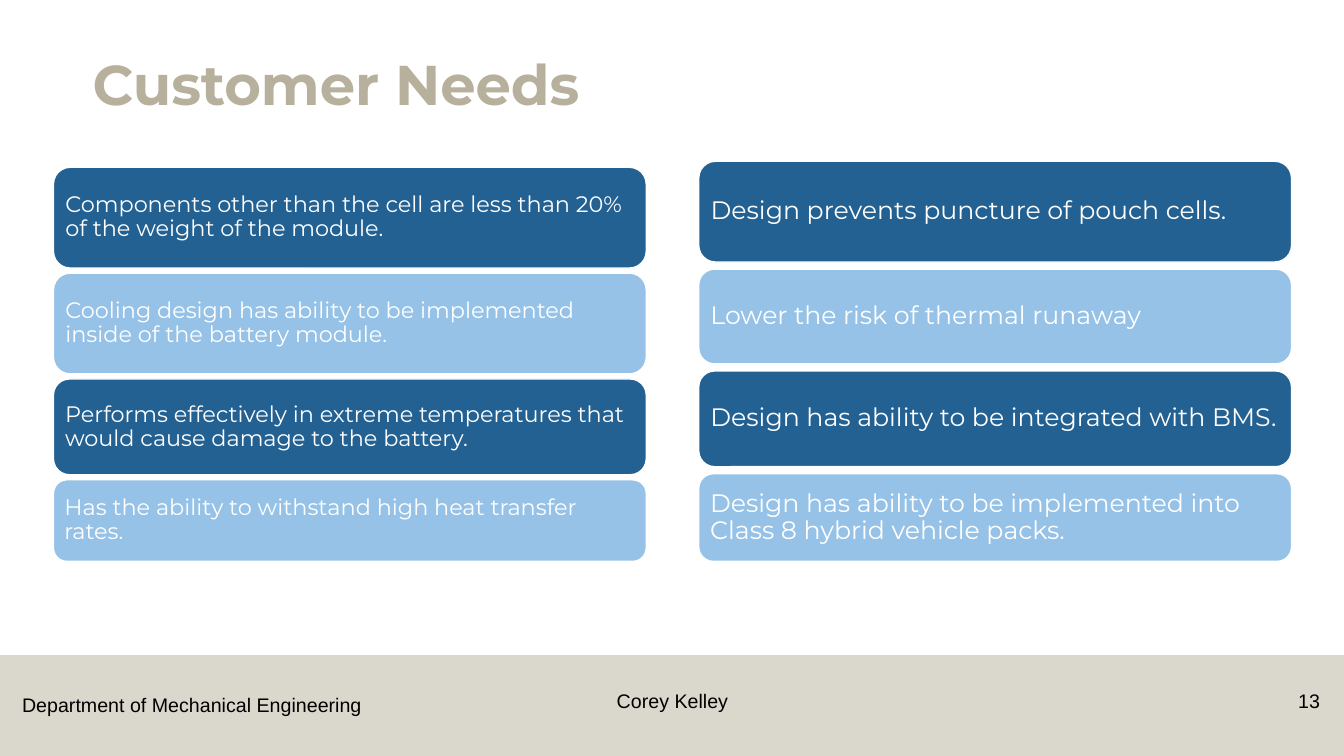
from dataclasses import dataclass

from lxml import etree
from pptx import Presentation
from pptx.dml.color import RGBColor
from pptx.enum.shapes import MSO_SHAPE
from pptx.enum.text import MSO_ANCHOR, PP_ALIGN
from pptx.oxml.ns import qn
from pptx.util import Pt

RECTANGLE, ROUNDED = MSO_SHAPE.RECTANGLE, MSO_SHAPE.ROUNDED_RECTANGLE
TOP, MIDDLE, BOTTOM = MSO_ANCHOR.TOP, MSO_ANCHOR.MIDDLE, MSO_ANCHOR.BOTTOM
LEFT, CENTER, RIGHT = PP_ALIGN.LEFT, PP_ALIGN.CENTER, PP_ALIGN.RIGHT
PX = 9144
SLIDE_WIDTH, SLIDE_HEIGHT = 1333, 750


@dataclass(frozen=True)
class Theme:
    """Colours, fonts and type sizes of the slide."""
    sand: str = "B7B09C"
    navy: str = "236192"
    sky: str = "95C2E6"
    white: str = "FFFFFF"
    black: str = "000000"
    heading_font: str = "Montserrat"
    footer_font: str = "Arial"
    title_size: int = 40
    left_size: int = 16
    right_size: int = 18
    footer_size: int = 14


class SlideBuilder:
    """Draws the elements of one slide in one theme."""

    def __init__(self, slide, theme):
        self.shapes = slide.shapes
        self.theme = theme

    def apply(self, target, formats):
        for name, value in formats.items():
            setattr(target, name, value)

    def fill_text(self, shape, text, frame_format, paragraph_format, font_format, color):
        frame = shape.text_frame
        paragraph = frame.paragraphs[0]
        paragraph.text = text
        self.apply(frame, frame_format)
        self.apply(paragraph, paragraph_format)
        self.apply(paragraph.font, font_format)
        paragraph.font.color.rgb = RGBColor.from_string(color)

    def block(self, kind, box, color):
        shape = self.shapes.add_shape(kind, *(n * PX for n in box))
        shape.shadow.inherit = False
        shape.fill.solid()
        shape.fill.fore_color.rgb = RGBColor.from_string(color)
        return shape

    def footer_band(self, box):
        band = self.block(RECTANGLE, box, self.theme.sand)
        band.line.fill.background()
        color = band.element.spPr.find(qn("a:solidFill"))[0]
        etree.SubElement(color, qn("a:alpha"), val="50000")

    def label(self, box, text, align, wrap=True):
        shape = self.shapes.add_textbox(*(n * PX for n in box))
        self.fill_text(shape, text, {"word_wrap": wrap, "vertical_anchor": TOP},
                       {"alignment": align},
                       {"name": self.theme.footer_font, "size": Pt(self.theme.footer_size)},
                       self.theme.black)

    def title(self, box, text):
        shape = self.shapes.add_textbox(*(n * PX for n in box))
        self.fill_text(shape, text, {"word_wrap": True, "vertical_anchor": BOTTOM},
                       {"alignment": LEFT, "line_spacing": 0.9},
                       {"name": self.theme.heading_font, "size": Pt(self.theme.title_size),
                        "bold": True},
                       self.theme.sand)

    def need(self, box, text, size, color):
        card = self.block(ROUNDED, box, color)
        card.line.color.rgb = RGBColor.from_string(self.theme.white)
        card.line.width = Pt(1)
        margins = {f"margin_{side}": 7 * PX for side in ("left", "top", "right", "bottom")}
        self.fill_text(card, text, {"word_wrap": True, "vertical_anchor": MIDDLE, **margins},
                       {"alignment": LEFT, "line_spacing": 0.9},
                       {"name": self.theme.heading_font, "size": Pt(size)},
                       self.theme.white)

    def need_column(self, left, top, gap, size, needs):
        for index, (height, text) in enumerate(needs):
            color = self.theme.sky if index % 2 else self.theme.navy
            self.need((left, top, 588, height), text, size, color)
            top += height + gap


LEFT_NEEDS = [
    (100, "Components other than the cell are less than 20% of the weight of the module."),
    (100, "Cooling design has ability to be implemented inside of the battery module."),
    (95, "Performs effectively in extreme temperatures that would cause damage to the battery."),
    (81, "Has the ability to withstand high heat transfer rates."),
]
RIGHT_NEEDS = [
    (100, "Design prevents puncture of pouch cells."),
    (94, "Lower the risk of thermal runaway"),
    (95, "Design has ability to be integrated with BMS."),
    (87, "Design has ability to be implemented into Class 8 hybrid vehicle packs."),
]


def main():
    deck = Presentation()
    deck.slide_width, deck.slide_height = SLIDE_WIDTH * PX, SLIDE_HEIGHT * PX
    theme = Theme()
    builder = SlideBuilder(deck.slides.add_slide(deck.slide_layouts[6]), theme)
    builder.footer_band((0, 650, SLIDE_WIDTH, 100))
    builder.label((12, 683, 359, 34), "Department of Mechanical Engineering", LEFT, wrap=False)
    builder.title((82, 13, 1150, 109), "Customer Needs")
    builder.label((442, 679, 450, 40), "Corey Kelley", CENTER)
    builder.label((1242, 679, 77, 40), "13", RIGHT)
    builder.need_column(53, 166, 5, theme.left_size, LEFT_NEEDS)
    builder.need_column(693, 160, 7, theme.right_size, RIGHT_NEEDS)
    deck.save("out.pptx")


if __name__ == "__main__":
    main()
